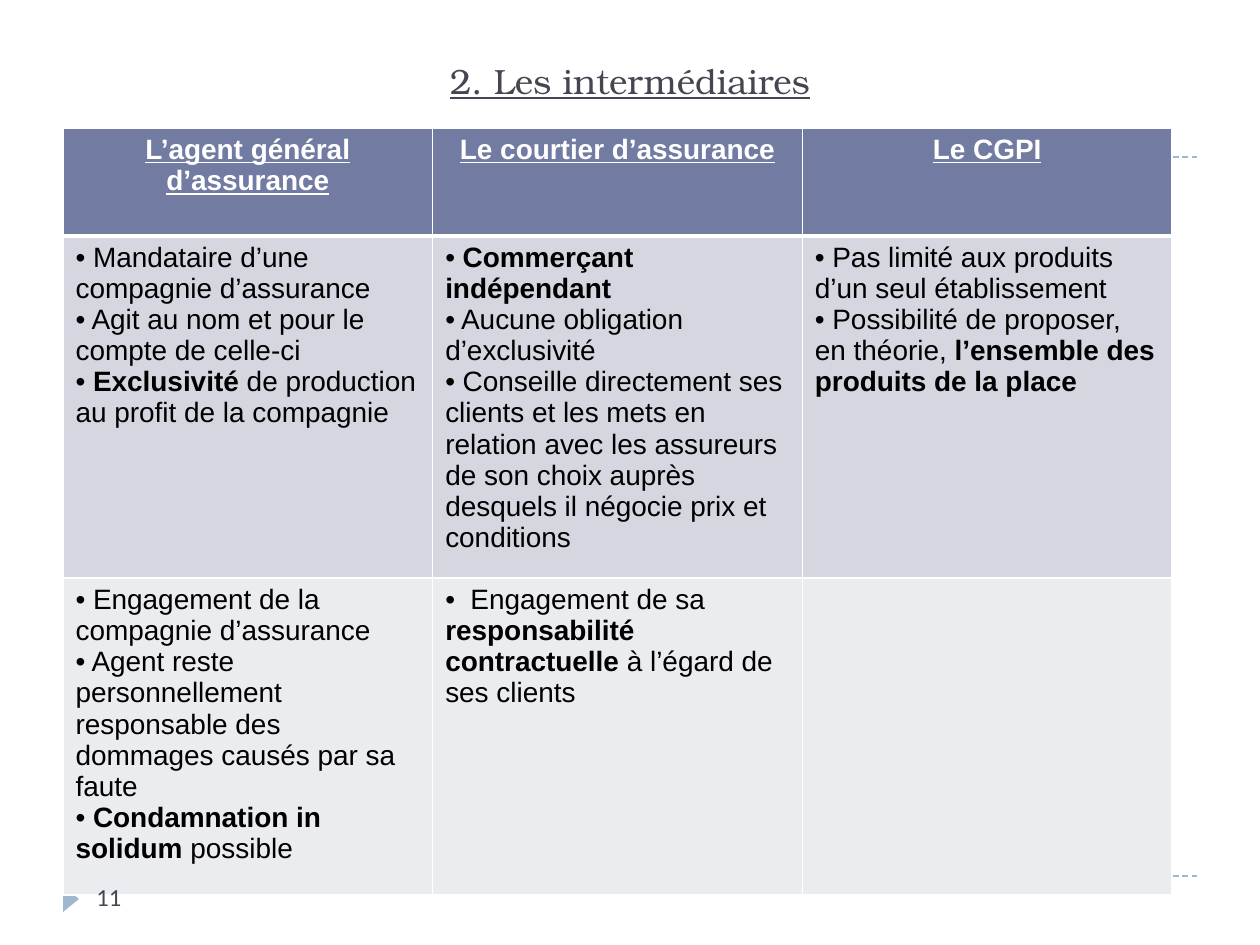
from dataclasses import dataclass

from lxml.etree import SubElement
from pptx import Presentation
from pptx.dml.color import RGBColor
from pptx.enum.dml import MSO_LINE
from pptx.enum.shapes import MSO_CONNECTOR, MSO_SHAPE
from pptx.enum.text import MSO_ANCHOR, PP_ALIGN
from pptx.oxml import parse_xml
from pptx.oxml.ns import nsdecls, qn
from pptx.util import Emu, Pt

EMU_PER_PX = 914400 / 126
PAGE_WIDTH, PAGE_HEIGHT = 1260, 945


@dataclass(frozen=True)
class Theme:
    ink: str = "464653"
    accent: str = "9FB8CD"
    white: str = "FFFFFF"
    black: str = "000000"
    row_fills: tuple = ("727CA3", "D5D7E0", "EBECF0")
    title_font: str = "TeX Gyre Bonum"
    table_font: str = "Arial"
    number_font: str = "Calibri"
    title_size: int = 20
    table_size: int = 16
    number_size: int = 14


HEADERS = ["L’agent général d’assurance", "Le courtier d’assurance", "Le CGPI"]

# Each cell is a list of bullets, each bullet a list of (text, bold) spans.
BODY = [
    [
        [
            [(" Mandataire d’une compagnie d’assurance", False)],
            [(" Agit au nom et pour le compte de celle-ci", False)],
            [(" ", False), ("Exclusivité", True),
             (" de production au profit de la compagnie", False)],
        ],
        [
            [(" ", False), ("Commerçant indépendant", True)],
            [(" Aucune obligation d’exclusivité", False)],
            [(" Conseille directement ses clients et les mets en relation avec "
              "les assureurs de son choix auprès desquels il négocie prix et "
              "conditions", False)],
        ],
        [
            [(" Pas limité aux produits d’un seul établissement", False)],
            [(" Possibilité de proposer, en théorie, ", False),
             ("l’ensemble des produits de la place", True)],
        ],
    ],
    [
        [
            [(" Engagement de la compagnie d’assurance", False)],
            [(" Agent reste personnellement responsable des dommages causés "
              "par sa faute", False)],
            [(" Condamnation in solidum ", True), ("possible", False)],
        ],
        [
            [("  Engagement de sa ", False),
             ("responsabilité contractuelle ", True),
             ("à l’égard de ses clients", False)],
        ],
        [],
    ],
]


def px(length):
    return Emu(round(length * EMU_PER_PX))


def color(code):
    return RGBColor.from_string(code)


def add_span(para, text, *, font, size, ink, bold=False, underline=False):
    span = para.add_run()
    span.text = text
    span.font.name = font
    span.font.size = Pt(size)
    span.font.color.rgb = color(ink)
    span.font.bold = bold
    span.font.underline = underline


def add_bullet(para, font):
    properties = para._p.get_or_add_pPr()
    properties.set("marL", "0")
    properties.set("indent", "0")
    SubElement(properties, qn("a:buFont")).set("typeface", font)
    SubElement(properties, qn("a:buChar")).set("char", "•")


def set_end_size(para, size):
    """Size the paragraph mark, which also sizes the bullet; call it last."""
    SubElement(para._p, qn("a:endParaRPr")).set("sz", str(size * 100))


def set_borders(cell, ink, **points):
    """Draw the cell's sides, given as L, R, T and B in points."""
    properties = cell._tc.get_or_add_tcPr()
    for position, side in enumerate("LRTB"):
        properties.insert(position, parse_xml(
            f'<a:ln{side} {nsdecls("a")} w="{Pt(points[side])}"><a:solidFill>'
            f'<a:srgbClr val="{ink}"/></a:solidFill></a:ln{side}>'))


class SlideBuilder:
    def __init__(self, page, theme):
        self.page = page
        self.theme = theme

    def dashed_line(self, left, right, top):
        line = self.page.shapes.add_connector(
            MSO_CONNECTOR.STRAIGHT, px(left), px(top), px(right), px(top))
        line.line.color.rgb = color(self.theme.accent)
        line.line.width = Pt(0.75)
        line.line.dash_style = MSO_LINE.DASH
        SubElement(line._element.spPr, qn("a:effectLst"))

    def marker(self, left, top, width, height):
        """Triangle that points right."""
        shape = self.page.shapes.add_shape(
            MSO_SHAPE.ISOSCELES_TRIANGLE,
            px(left), px(top), px(width), px(height))
        shape.rotation = 90
        shape.shadow.inherit = False
        shape.fill.solid()
        shape.fill.fore_color.rgb = color(self.theme.accent)
        shape.line.fill.background()

    def text(self, text, left, top, width, height, *, align=PP_ALIGN.LEFT,
             anchor=MSO_ANCHOR.TOP, **style):
        box = self.page.shapes.add_textbox(
            px(left), px(top), px(width), px(height))
        box.text_frame.word_wrap = True
        box.text_frame.vertical_anchor = anchor
        para = box.text_frame.paragraphs[0]
        para.alignment = align
        add_span(para, text, ink=self.theme.ink, **style)

    def table(self, left, top, width, row_heights, headers, body):
        theme = self.theme
        table = self.page.shapes.add_table(
            len(row_heights), len(headers), px(left), px(top),
            px(width), px(sum(row_heights))).table
        for column in table.columns:
            column.width = px(width / len(headers))
        for row, height in zip(table.rows, row_heights):
            row.height = px(height)

        style = dict(font=theme.table_font, size=theme.table_size)
        for cell, text in zip(table.rows[0].cells, headers):
            para = cell.text_frame.paragraphs[0]
            para.alignment = PP_ALIGN.CENTER
            add_span(para, text, ink=theme.white, bold=True, underline=True,
                     **style)

        for row_index, contents in enumerate(body, start=1):
            for cell, bullets in zip(table.rows[row_index].cells, contents):
                frame = cell.text_frame
                for index, spans in enumerate(bullets):
                    para = frame.add_paragraph() if index else frame.paragraphs[0]
                    add_bullet(para, theme.table_font)
                    for text, bold in spans:
                        add_span(para, text, ink=theme.black, bold=bold, **style)

        for row_index, row in enumerate(table.rows):
            for cell in row.cells:
                for para in cell.text_frame.paragraphs:
                    set_end_size(para, theme.table_size)
                cell.margin_bottom = 0
                cell.fill.solid()
                cell.fill.fore_color.rgb = color(theme.row_fills[row_index])
                set_borders(cell, theme.white, L=1, R=1, T=1,
                            B=3 if row_index == 0 else 1)


def main():
    deck = Presentation()
    deck.slide_width, deck.slide_height = px(PAGE_WIDTH), px(PAGE_HEIGHT)
    theme = Theme()
    margin = 63
    builder = SlideBuilder(deck.slides.add_slide(deck.slide_layouts[6]), theme)

    for top in (876, 157):
        builder.dashed_line(margin, PAGE_WIDTH - margin, top)
    builder.marker(58, 891, 26, 16)
    builder.text("2. Les intermédiaires", margin, 21, PAGE_WIDTH - 2 * margin, 87,
                 align=PP_ALIGN.CENTER, anchor=MSO_ANCHOR.BOTTOM,
                 font=theme.title_font, size=theme.title_size, underline=True)
    builder.table(margin, 128, 1109, (108, 338, 317), HEADERS, BODY)
    builder.text("11", 84, 876, 273, 50,
                 font=theme.number_font, size=theme.number_size)
    deck.save("out.pptx")


if __name__ == "__main__":
    main()
